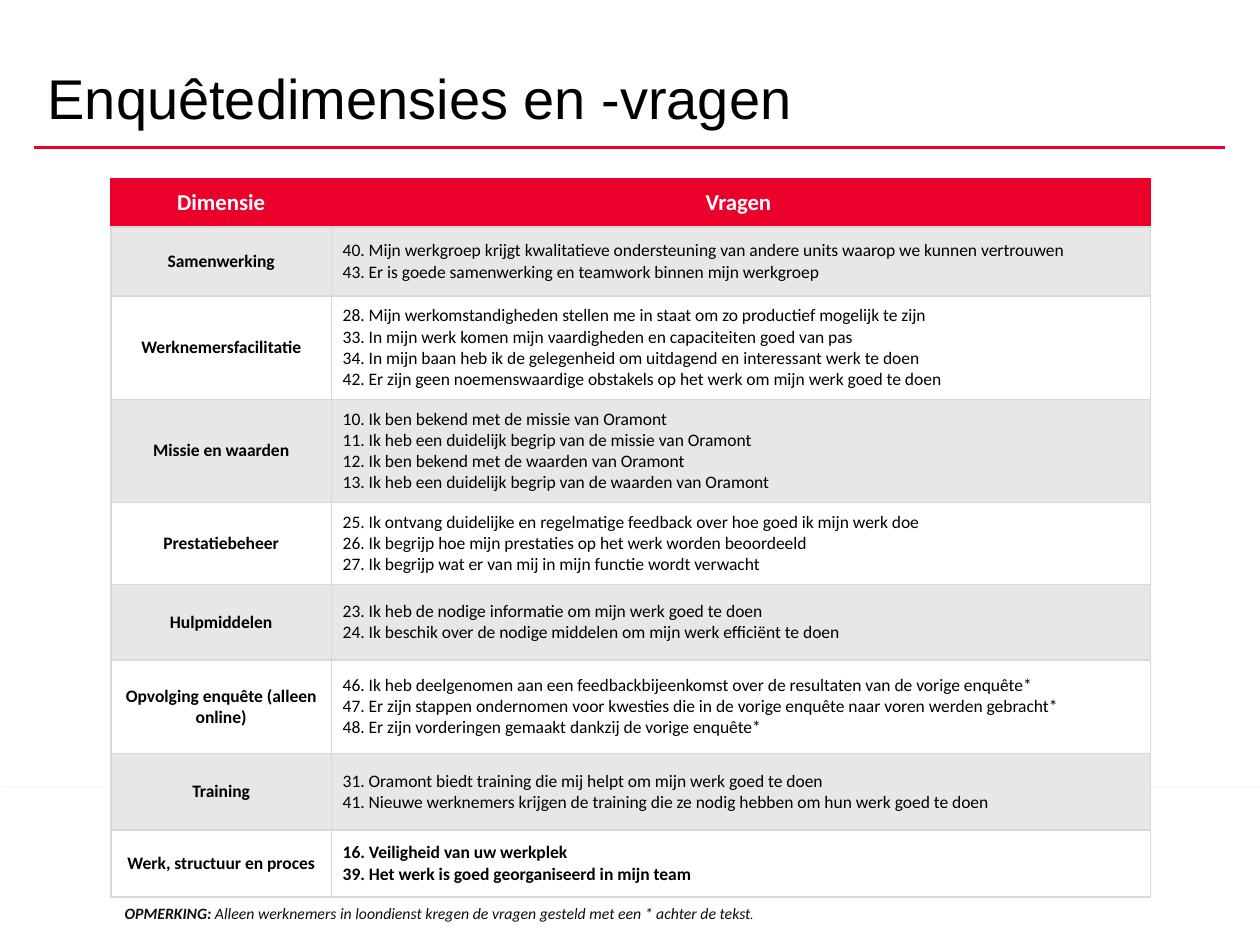
"""Build the slide with the survey dimensions and their questions."""
import pptx
import pptx.util
import pptx.dml.color
import pptx.enum.shapes
import pptx.enum.text
import pptx.oxml
import pptx.oxml.ns

Inches = pptx.util.Inches
Pt = pptx.util.Pt
NS = pptx.oxml.ns.nsdecls("a")
MIDDLE = pptx.enum.text.MSO_ANCHOR.MIDDLE
CENTER = pptx.enum.text.PP_ALIGN.CENTER
RED, GREY, PALE, WHITE, BLACK = "EA002A", "D9D9D9", "E7E7E7", "FFFFFF", "000000"


def color(code):
    """Turn a hex string into a colour."""
    return pptx.dml.color.RGBColor.from_string(code)


def write(text, para, size=10, font="Calibri", ink=BLACK, bold=False, slant=False, align=None):
    """Add a run of formatted text to a paragraph."""
    run = para.add_run()
    run.text = text
    run.font.size = Pt(size)
    run.font.name = font
    run.font.bold = bold
    run.font.italic = slant
    run.font.color.rgb = color(ink)
    if align is not None:
        para.alignment = align


deck = pptx.Presentation()
deck.slide_width, deck.slide_height = Inches(10), Inches(7.5)
slide = deck.slides.add_slide(deck.slide_layouts[6])
shapes = slide.shapes

band = shapes.add_shape(
    pptx.enum.shapes.MSO_SHAPE.RECTANGLE, Inches(0), Inches(6.26), Inches(10), Inches(1.24)
)
band.fill.solid()
band.fill.fore_color.rgb = color(WHITE)
band.line.color.rgb = color(WHITE)
band.line.width = Pt(0.75)
band._element.spPr.append(pptx.oxml.parse_xml(
    f'<a:effectLst {NS}><a:outerShdw blurRad="{Pt(3.1)}" dist="{Pt(1.8)}" dir="5400000" '
    f'rotWithShape="0"><a:srgbClr val="{BLACK}"><a:alpha val="35000"/></a:srgbClr>'
    '</a:outerShdw></a:effectLst>'
))

rule = shapes.add_connector(
    pptx.enum.shapes.MSO_CONNECTOR.STRAIGHT, Inches(0.27), Inches(1.17), Inches(9.72), Inches(1.17)
)
rule.line.color.rgb = color(RED)
rule.line.width = Pt(2)
rule._element.spPr.append(pptx.oxml.parse_xml(f"<a:effectLst {NS}/>"))

title = shapes.add_textbox(Inches(0.28), Inches(0.05), Inches(9), Inches(1.03)).text_frame
title.word_wrap = True
title.vertical_anchor = pptx.enum.text.MSO_ANCHOR.BOTTOM
title.paragraphs[0].line_spacing = 0.8
write("Enquêtedimensies en -vragen", title.paragraphs[0], size=32, font="Arial")

note = shapes.add_textbox(Inches(0.88), Inches(7.11), Inches(7.3), Inches(0.32)).text_frame
note.word_wrap = True
note.margin_left = note.margin_right = Inches(0.11)
note.margin_top = note.margin_bottom = Inches(0.06)
for text, look in (
    ("OPMERKING: ", dict(size=9, bold=True, slant=True)),
    ("Alleen werknemers in loondienst kregen de vragen gesteld met een * achter de tekst",
     dict(size=9, slant=True)),
    (".", dict(size=7)),
):
    write(text, note.paragraphs[0], ink="0D0D0D", **look)

rows = [
    (0.38, "Dimensie", ["Vragen "]),
    (0.55, "Samenwerking", [
        "40. Mijn werkgroep krijgt kwalitatieve ondersteuning van andere units waarop we kunnen vertrouwen",
        "43. Er is goede samenwerking en teamwork binnen mijn werkgroep",
    ]),
    (0.82, "Werknemersfacilitatie", [
        "28. Mijn werkomstandigheden stellen me in staat om zo productief mogelijk te zijn",
        "33. In mijn werk komen mijn vaardigheden en capaciteiten goed van pas",
        "34. In mijn baan heb ik de gelegenheid om uitdagend en interessant werk te doen",
        "42. Er zijn geen noemenswaardige obstakels op het werk om mijn werk goed te doen",
    ]),
    (0.82, "Missie en waarden", [
        "10. Ik ben bekend met de missie van Oramont",
        "11. Ik heb een duidelijk begrip van de missie van Oramont",
        "12. Ik ben bekend met de waarden van Oramont",
        "13. Ik heb een duidelijk begrip van de waarden van Oramont",
    ]),
    (0.65, "Prestatiebeheer", [
        "25. Ik ontvang duidelijke en regelmatige feedback over hoe goed ik mijn werk doe",
        "26. Ik begrijp hoe mijn prestaties op het werk worden beoordeeld",
        "27. Ik begrijp wat er van mij in mijn functie wordt verwacht",
    ]),
    (0.6, "Hulpmiddelen", [
        "23. Ik heb de nodige informatie om mijn werk goed te doen",
        "24. Ik beschik over de nodige middelen om mijn werk efficiënt te doen",
    ]),
    (0.74, "Opvolging enquête (alleen online)", [
        "46. Ik heb deelgenomen aan een feedbackbijeenkomst over de resultaten van de vorige enquête*",
        "47. Er zijn stappen ondernomen voor kwesties die in de vorige enquête naar voren werden gebracht*",
        "48. Er zijn vorderingen gemaakt dankzij de vorige enquête*",
    ]),
    (0.61, "Training", [
        "31. Oramont biedt training die mij helpt om mijn werk goed te doen",
        "41. Nieuwe werknemers krijgen de training die ze nodig hebben om hun werk goed te doen",
    ]),
    (0.53, "Werk, structuur en proces", [
        "16. Veiligheid van uw werkplek",
        "39. Het werk is goed georganiseerd in mijn team",
    ]),
]
table = shapes.add_table(
    len(rows), 2, Inches(0.88), Inches(1.42), Inches(8.25), Inches(5.69)
).table
table.first_row = table.horz_banding = False
table.columns[0].width, table.columns[1].width = Inches(1.75), Inches(6.5)

for r, (height, name, asks) in enumerate(rows):
    table.rows[r].height = Inches(height)
    head = r == 0
    last = r == len(rows) - 1
    for c, lines in enumerate(([name], asks)):
        cell = table.cell(r, c)
        cell.vertical_anchor = MIDDLE
        cell.margin_left = cell.margin_right = Inches(0.09)
        cell.margin_top = cell.margin_bottom = Inches(0.04)
        for side in "LRTB":
            edge = RED if head and side != "B" else GREY
            cell._tc.get_or_add_tcPr().append(pptx.oxml.parse_xml(
                f'<a:ln{side} {NS} w="{Pt(1)}"><a:solidFill><a:srgbClr val="{edge}"/>'
                f'</a:solidFill></a:ln{side}>'
            ))
        cell.fill.solid()
        cell.fill.fore_color.rgb = color(RED if head else PALE if r % 2 else WHITE)
        frame = cell.text_frame
        for i, line in enumerate(lines):
            para = frame.add_paragraph() if i else frame.paragraphs[0]
            write(line, para, size=13 if head else 10, ink=WHITE if head else BLACK,
                  bold=head or last or c == 0, align=CENTER if head or c == 0 else None)

deck.save("out.pptx")
